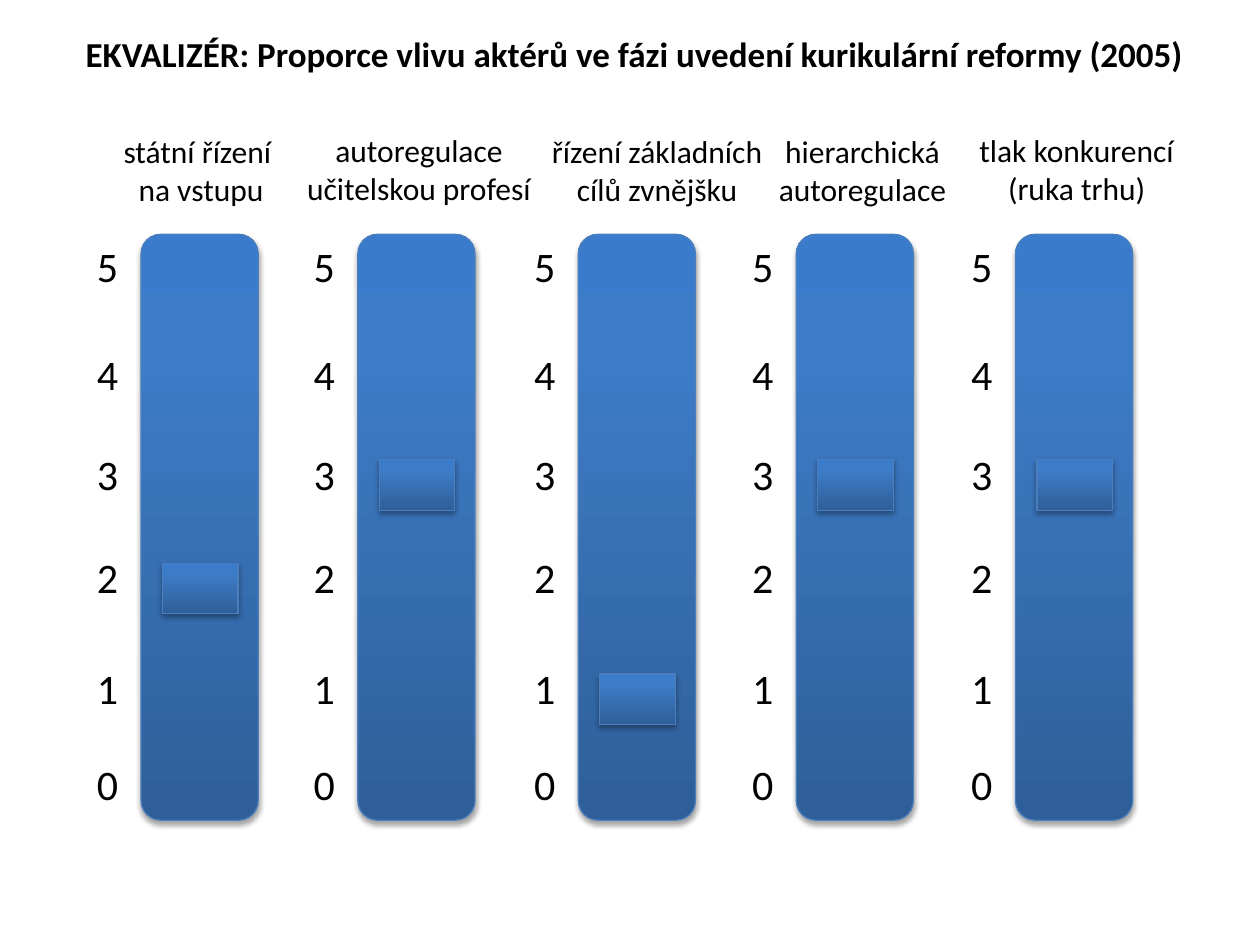
from copy import deepcopy

from lxml.etree import SubElement
from pptx import Presentation
from pptx.dml.color import RGBColor
from pptx.enum.shapes import MSO_SHAPE as Shape
from pptx.enum.text import MSO_ANCHOR as Anchor, MSO_AUTO_SIZE as Fit, PP_ALIGN as Align
from pptx.oxml.ns import qn
from pptx.util import Inches, Pt

TICKS = [5.97, 5.21, 4.33, 3.51, 2.72, 1.86]
STOPS = [(0, "2F5F99"), (0.8, "3D7CC7"), (1, "3A7CCB")]
BANDS = [
    (0.67, 2, ["státní řízení ", "na vstupu"], (0.67, 1, 1.85, 0.73)),
    (2.39, 3, ["autoregulace učitelskou profesí"], (2.3, 0.99, 2.05, 0.73)),
    (4.14, 1, ["řízení základních cílů zvnějšku"], (4.24, 1, 1.95, 0.73)),
    (5.87, 3, ["hierarchická autoregulace"], (5.87, 1, 1.95, 0.73)),
    (7.61, 3, ["tlak konkurencí", "(ruka trhu)"], (7.61, 0.99, 1.87, 0.73)),
]


def paint(color, code):
    """Set a colour from a hex string."""
    color.rgb = RGBColor.from_string(code)


def write(frame, lines, size, align=Align.LEFT, bold=False):
    """Write one paragraph per line into a text frame."""
    frame.word_wrap = True
    for i, line in enumerate(lines):
        para = frame.add_paragraph() if i else frame.paragraphs[0]
        para.alignment = align
        run = para.add_run()
        run.text = line
        run.font.name = "Calibri"
        run.font.size = Pt(size)
        run.font.bold = bold
        paint(run.font.color, "000000")


def add_label(group, box, lines, size, align=Align.LEFT):
    """Add a text box that grows with its text."""
    label = group.shapes.add_textbox(*map(Inches, box))
    write(label.text_frame, lines, size, align)
    label.text_frame.auto_size = Fit.SHAPE_TO_FIT_TEXT


def add_shade(shape):
    """Give a shape a soft shadow below it."""
    shape.shadow.inherit = False
    effects = shape._element.spPr.find(qn("a:effectLst"))
    outer = SubElement(effects, qn("a:outerShdw"), blurRad=str(Pt(3.1)),
                       dist=str(Pt(1.8)), dir="5400000", rotWithShape="0")
    tone = SubElement(outer, qn("a:srgbClr"), val="000000")
    SubElement(tone, qn("a:alpha"), val="35000")


def add_block(group, kind, box):
    """Add a blue gradient shape with a thin outline."""
    block = group.shapes.add_shape(kind, *map(Inches, box))
    block.fill.gradient()
    block.fill.gradient_angle = 90
    stops = block._element.spPr.find(qn("a:gradFill")).find(qn("a:gsLst"))
    stops.append(deepcopy(stops[-1]))
    for stop, (place, code) in zip(block.fill.gradient_stops, STOPS):
        stop.position = place
        paint(stop.color, code)
    paint(block.line.color, "4B7EBC")
    block.line.width = Pt(0.75)
    add_shade(block)


def add_band(slide, left, level, lines, box):
    """Add one slider with its scale, knob and heading."""
    group = slide.shapes.add_group_shape()
    add_block(group, Shape.FLOWCHART_ALTERNATE_PROCESS, (left + 0.45, 1.86, 0.93, 4.65))
    for value, top in enumerate(TICKS):
        add_label(group, (left, top, 0.45, 0.53), [str(value)], 24)
    add_block(group, Shape.ACTION_BUTTON_CUSTOM, (left + 0.62, TICKS[level] + 0.14, 0.6, 0.4))
    add_label(group, box, lines, 18, Align.CENTER)


def add_title(slide, text):
    """Place and fill the title."""
    title = slide.shapes.title
    title.left, title.top, title.width, title.height = map(Inches, (0.35, 0.21, 9.37, 0.44))
    frame = title.text_frame
    frame.vertical_anchor = Anchor.TOP
    write(frame, [text], 20, Align.CENTER, True)
    frame.auto_size = Fit.SHAPE_TO_FIT_TEXT


def main():
    """Build and save the slide."""
    deck = Presentation()
    deck.slide_width, deck.slide_height = Inches(10), Inches(7.5)
    slide = deck.slides.add_slide(deck.slide_layouts[5])
    for band in BANDS:
        add_band(slide, *band)
    add_title(slide, "EKVALIZÉR: Proporce vlivu aktérů ve fázi uvedení kurikulární reformy (2005)")
    deck.save("out.pptx")


if __name__ == "__main__":
    main()
